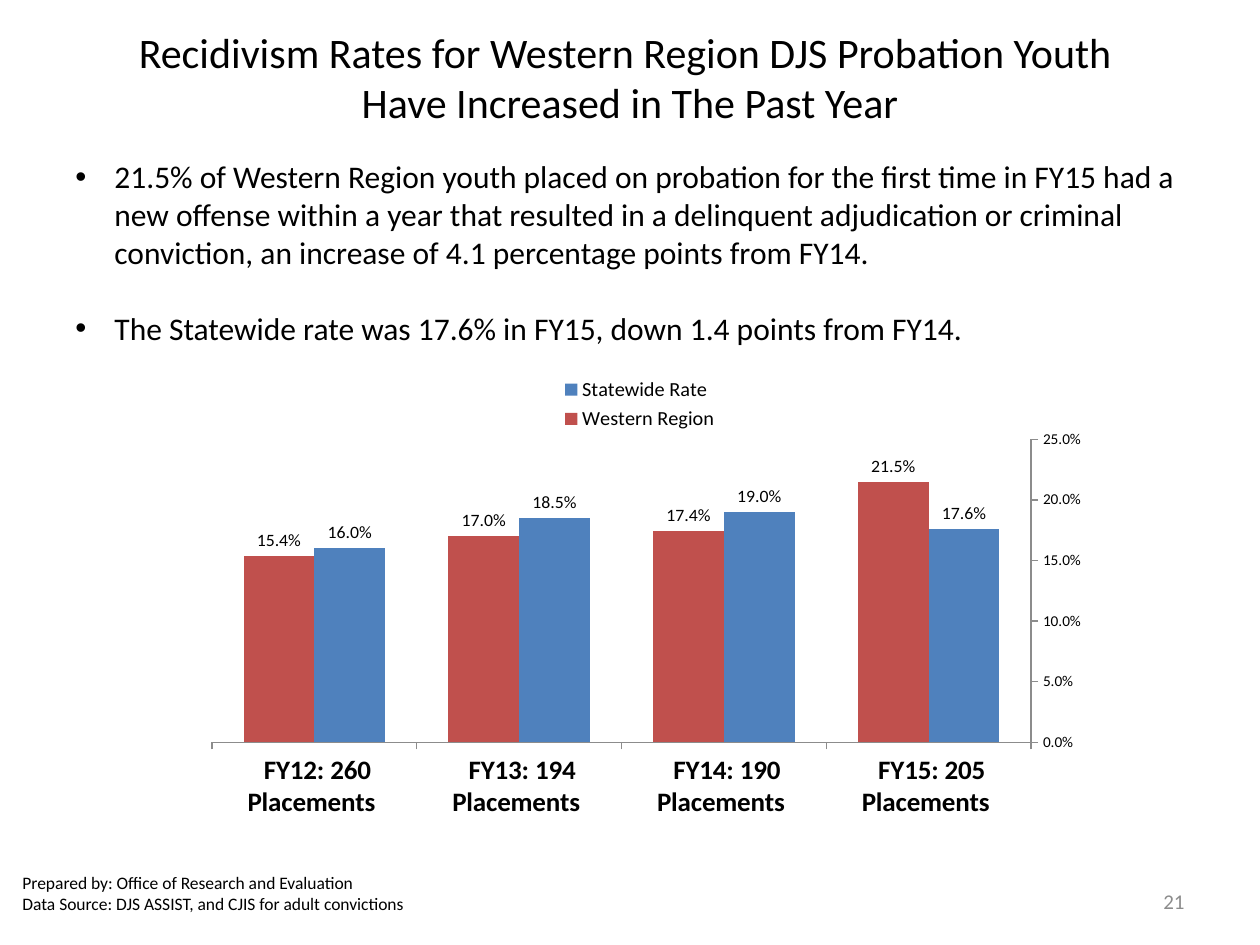
from lxml import etree
from pptx import Presentation
from pptx.chart.data import CategoryChartData
from pptx.dml.color import RGBColor
from pptx.enum.chart import XL_AXIS_CROSSES, XL_CHART_TYPE, XL_LABEL_POSITION
from pptx.enum.chart import XL_LEGEND_POSITION, XL_TICK_MARK
from pptx.enum.text import MSO_ANCHOR, PP_ALIGN
from pptx.oxml import parse_xml
from pptx.oxml.ns import nsdecls, qn
from pptx.util import Inches, Pt

BLACK = RGBColor(0x00, 0x00, 0x00)
GRAY = RGBColor(0x8C, 0x8C, 0x8C)
BLUE = RGBColor(0x4F, 0x81, 0xBD)
RED = RGBColor(0xC0, 0x50, 0x4D)
PERCENT = "0.0%"

PLACEMENTS = {"FY15": 205, "FY14": 190, "FY13": 194, "FY12": 260}
SERIES = [
    ("Statewide Rate", (0.176, 0.19, 0.185, 0.16), BLUE),
    ("Western Region", (0.215, 0.174, 0.17, 0.154), RED),
]
BULLETS = [
    "21.5% of Western Region youth placed on probation for the first time in FY15 "
    "had a new offense within a year that resulted in a delinquent adjudication or "
    "criminal conviction, an increase of 4.1 percentage points from FY14.",
    "The Statewide rate was 17.6% in FY15, down 1.4 points from FY14.",
]


def set_font(font, size, color=BLACK, bold=False):
    font.name = "Calibri"
    font.size = Pt(size)
    font.bold = bold
    font.color.rgb = color


def write_text(frame, lines, size, color=BLACK, align=PP_ALIGN.LEFT, bullet=False, gap=0):
    """Fill a text frame with one paragraph per line; gap is the space between them."""
    frame.word_wrap = True
    frame.vertical_anchor = MSO_ANCHOR.MIDDLE
    for index, line in enumerate(lines):
        paragraph = frame.add_paragraph() if index else frame.paragraphs[0]
        paragraph.text = line
        paragraph.alignment = align
        paragraph.space_before = Pt(gap if index else 0)
        for run in paragraph.runs:
            set_font(run.font, size, color)
        if bullet:
            properties = paragraph._p.get_or_add_pPr()
            properties.set("marL", str(Inches(0.31)))
            properties.set("indent", str(-Inches(0.31)))
            etree.SubElement(properties, qn("a:buFont"), typeface="Arial")
            etree.SubElement(properties, qn("a:buChar"), char="•")


def manual_layout(x, y, width, height, inner=False):
    """Return a chart layout element, in fractions of the chart area."""
    target = '<c:layoutTarget val="inner"/>' if inner else ""
    return parse_xml(
        f'<c:layout {nsdecls("c")}><c:manualLayout>{target}'
        '<c:xMode val="edge"/><c:yMode val="edge"/>'
        f'<c:x val="{x}"/><c:y val="{y}"/><c:w val="{width}"/><c:h val="{height}"/>'
        "</c:manualLayout></c:layout>"
    )


class SlideBuilder:
    def __init__(self, presentation):
        self.slide = presentation.slides.add_slide(presentation.slide_layouts[5])

    def add_title(self, text, left, top, width, height, size):
        title = self.slide.shapes.title
        title.left, title.top = Inches(left), Inches(top)
        title.width, title.height = Inches(width), Inches(height)
        write_text(title.text_frame, [text], size, align=PP_ALIGN.CENTER)

    def add_text(self, lines, left, top, width, height, size, **text_format):
        box = self.slide.shapes.add_textbox(
            Inches(left), Inches(top), Inches(width), Inches(height))
        write_text(box.text_frame, lines, size, **text_format)

    def add_column_chart(self, left, top, width, height):
        data = CategoryChartData(number_format=PERCENT)
        data.categories = [f" {year}: {count} Placements " for year, count in PLACEMENTS.items()]
        for name, values, _ in SERIES:
            data.add_series(name, values)
        chart = self.slide.shapes.add_chart(
            XL_CHART_TYPE.COLUMN_CLUSTERED,
            Inches(left), Inches(top), Inches(width), Inches(height), data).chart
        chart.has_title = False
        set_font(chart.font, 10)
        self.style_columns(chart.plots[0])
        self.style_axes(chart.category_axis, chart.value_axis)
        self.style_legend(chart)
        plot_area = chart._chartSpace.chart.plotArea
        for layout in plot_area.findall(qn("c:layout")):
            plot_area.remove(layout)
        plot_area.insert(0, manual_layout(0.061, 0.167, 0.917, 0.708, inner=True))

    def style_columns(self, plot):
        plot.gap_width = 89
        plot.overlap = 0
        plot.vary_by_categories = False
        for series, (_, _, color) in zip(plot.series, SERIES):
            series.format.fill.solid()
            series.format.fill.fore_color.rgb = color
            labels = series.data_labels
            labels.show_value = True
            labels.position = XL_LABEL_POSITION.OUTSIDE_END
            labels.number_format = PERCENT
            labels.number_format_is_linked = False
            set_font(labels.font, 10.5)

    def style_axes(self, category_axis, value_axis):
        for axis, size, bold in ((category_axis, 16, True), (value_axis, 9, False)):
            axis.has_major_gridlines = False
            axis.major_tick_mark = XL_TICK_MARK.OUTSIDE
            axis.format.line.color.rgb = GRAY
            axis.format.line.width = Pt(0.75)
            set_font(axis.tick_labels.font, size, bold=bold)
        # Years run newest first in the data, so the axis is reversed
        category_axis.reverse_order = True
        category_axis.crosses = XL_AXIS_CROSSES.MAXIMUM
        value_axis.minimum_scale = 0
        value_axis.maximum_scale = 0.25
        value_axis.major_unit = 0.05
        value_axis.tick_labels.number_format = PERCENT
        value_axis.tick_labels.number_format_is_linked = False

    def style_legend(self, chart):
        chart.has_legend = True
        legend = chart.legend
        legend.position = XL_LEGEND_POSITION.RIGHT
        legend.include_in_layout = False
        set_font(legend.font, 12)
        for layout in legend._element.findall(qn("c:layout")):
            legend._element.remove(layout)
        position = legend._element.find(qn("c:legendPos"))
        position.addnext(manual_layout(0.43, 0.01, 0.22, 0.15))


def main():
    presentation = Presentation()
    presentation.slide_width = Inches(10)
    presentation.slide_height = Inches(7.5)
    builder = SlideBuilder(presentation)
    builder.add_title(
        "Recidivism Rates for Western Region DJS Probation Youth \v"
        "Have Increased in The Past Year", 0, 0.3, 10, 0.62, size=24)
    builder.add_text(BULLETS, 0.5, 1.29, 9.08, 1.42, size=18, bullet=True, gap=22)
    builder.add_text(["21"], 7.17, 6.95, 2.33, 0.4, size=12, color=GRAY, align=PP_ALIGN.RIGHT)
    builder.add_text(
        ["Prepared by: Office of Research and Evaluation",
         "Data Source: DJS ASSIST, and CJIS for adult convictions"],
        0.08, 6.83, 3.42, 0.52, size=10)
    builder.add_column_chart(1.25, 2.92, 7.33, 3.58)
    presentation.save("out.pptx")


if __name__ == "__main__":
    main()
